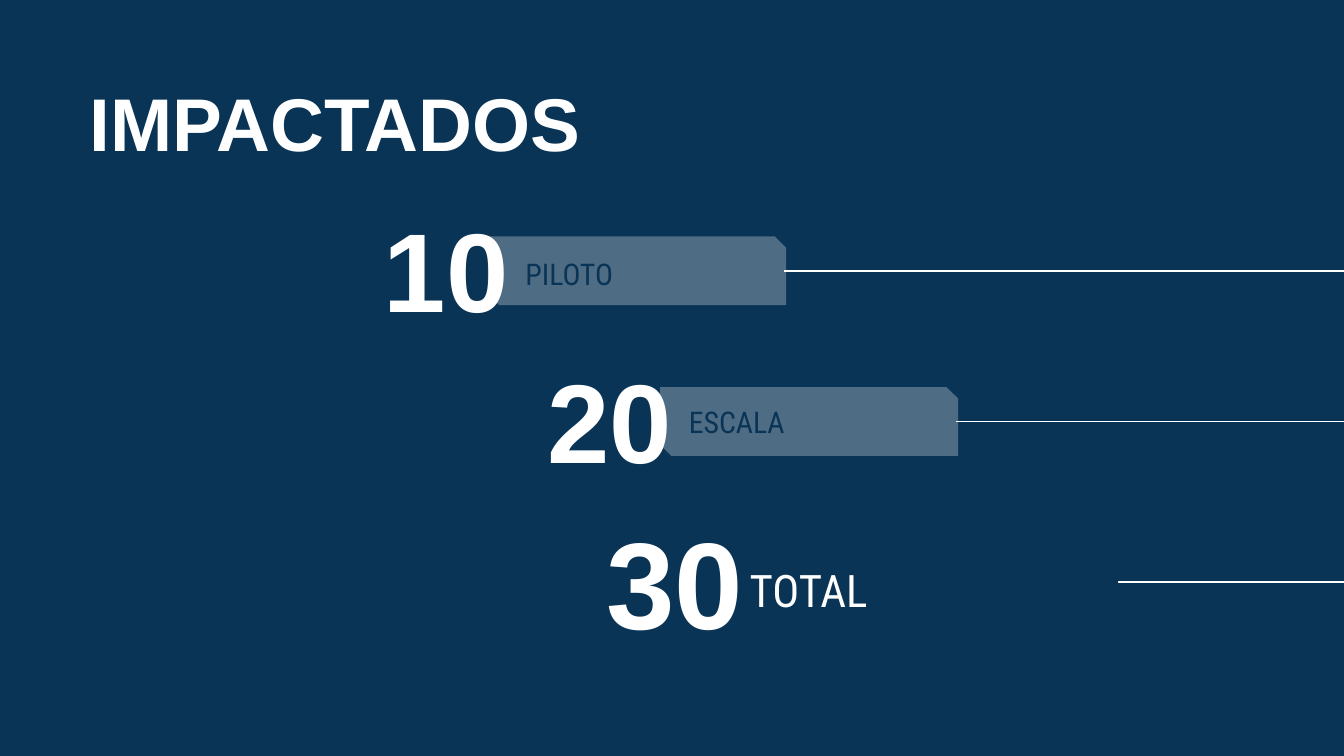
from dataclasses import dataclass

from lxml import etree
from pptx import Presentation
from pptx import util as u
from pptx.dml.color import RGBColor
from pptx.enum import shapes, text
from pptx.oxml.ns import qn

NAVY = RGBColor(0x0A, 0x34, 0x55)
WHITE = RGBColor(0xFF, 0xFF, 0xFF)
HEAD_FONT = "Arial"
LABEL_FONT = "Roboto Condensed"
PAGE_WIDTH = 25.4
INSET = 0.25


@dataclass
class Row:
    """One figure with its label and bar; lengths in centimetres."""
    number: str
    label: str
    box: tuple
    number_overlap: float
    label_offset: tuple
    number_size: int = 60
    label_size: int = 16
    label_color: RGBColor = NAVY
    bar_color: RGBColor = WHITE
    bar_opacity: int = 28


ROWS = [
    Row("10", "PILOTO", (9.22, 4.47, 5.64, 1.3), 0.64, (0.46, 0.05)),
    Row("20", "ESCALA", (12.47, 7.32, 5.64, 1.3), 0.48, (0.3, 0)),
    Row("30", "TOTAL", (12.98, 10.16, 8.15, 1.68), 1.32, (0.94, 0.13),
        66, 24, WHITE, NAVY, 100),
]


def cm_box(*lengths):
    """Convert centimetres to lengths."""
    return [u.Cm(length) for length in lengths]


def write(shape, words, font, size, color, bold=False,
          align=text.PP_ALIGN.LEFT, anchor=text.MSO_ANCHOR.TOP):
    """Fill a shape with one formatted paragraph."""
    frame = shape.text_frame
    frame.word_wrap = True
    frame.auto_size = text.MSO_AUTO_SIZE.NONE
    frame.vertical_anchor = anchor
    frame.margin_left = frame.margin_right = u.Cm(INSET)
    frame.margin_top = frame.margin_bottom = u.Cm(INSET)
    para = frame.paragraphs[0]
    para.text = words
    para.alignment = align
    para.line_spacing = 1.1
    para.space_before = u.Pt(0)
    para.font.name = font
    para.font.size = u.Pt(size)
    para.font.bold = bold
    para.font.color.rgb = color


def add_title(page, box):
    """Place the slide title in its box."""
    title = page.shapes.title
    title.left, title.top, title.width, title.height = cm_box(*box)
    write(title, "IMPACTADOS", HEAD_FONT, 40, WHITE, bold=True)


def add_leader(page, start, middle):
    """Draw a thin line from the bar to the slide's right edge."""
    line = page.shapes.add_connector(
        shapes.MSO_CONNECTOR.STRAIGHT,
        *cm_box(PAGE_WIDTH, middle, start, middle))
    line.line.color.rgb = WHITE
    line.line.width = u.Pt(0.75)
    etree.SubElement(line._element.spPr, qn("a:effectLst"))


def add_bar(page, box, color, opacity):
    """Draw the snipped bar with the given opacity in percent."""
    bar = page.shapes.add_shape(
        shapes.MSO_SHAPE.SNIP_2_DIAG_RECTANGLE, *cm_box(*box))
    bar.adjustments[0] = 0
    bar.adjustments[1] = 0.167
    bar.shadow.inherit = False
    bar.line.fill.background()
    bar.fill.solid()
    bar.fill.fore_color.rgb = color
    if opacity < 100:
        tint = bar._element.spPr.find(qn("a:solidFill"))[0]
        etree.SubElement(tint, qn("a:alpha"), val=str(opacity * 1000))


def add_row(page, row):
    """Place a figure, its bar, label and leader line around the row's box."""
    left, top, width, height = row.box
    middle = top + height / 2
    add_leader(page, left + width - 0.04, middle)
    add_bar(page, row.box, row.bar_color, row.bar_opacity)

    number_width, number_height = 4.98, 2.1
    number = page.shapes.add_textbox(*cm_box(
        left + row.number_overlap - number_width,
        middle - 0.18 - number_height / 2, number_width, number_height))
    write(number, row.number, HEAD_FONT, row.number_size, WHITE, True,
          text.PP_ALIGN.RIGHT, text.MSO_ANCHOR.MIDDLE)

    across, down = row.label_offset
    label = page.shapes.add_textbox(
        *cm_box(left + across, top + down, 5.2, 0.94))
    write(label, row.label, LABEL_FONT, row.label_size, row.label_color)


def main():
    """Build the slide and save the deck."""
    deck = Presentation()
    deck.slide_width, deck.slide_height = cm_box(PAGE_WIDTH, 14.29)
    page = deck.slides.add_slide(deck.slide_layouts.get_by_name("Title Only"))
    page.background.fill.solid()
    page.background.fill.fore_color.rgb = NAVY
    add_title(page, (1.45, 1.04, 14.48, 2.62))
    for row in ROWS:
        add_row(page, row)
    deck.save("out.pptx")


if __name__ == "__main__":
    main()
